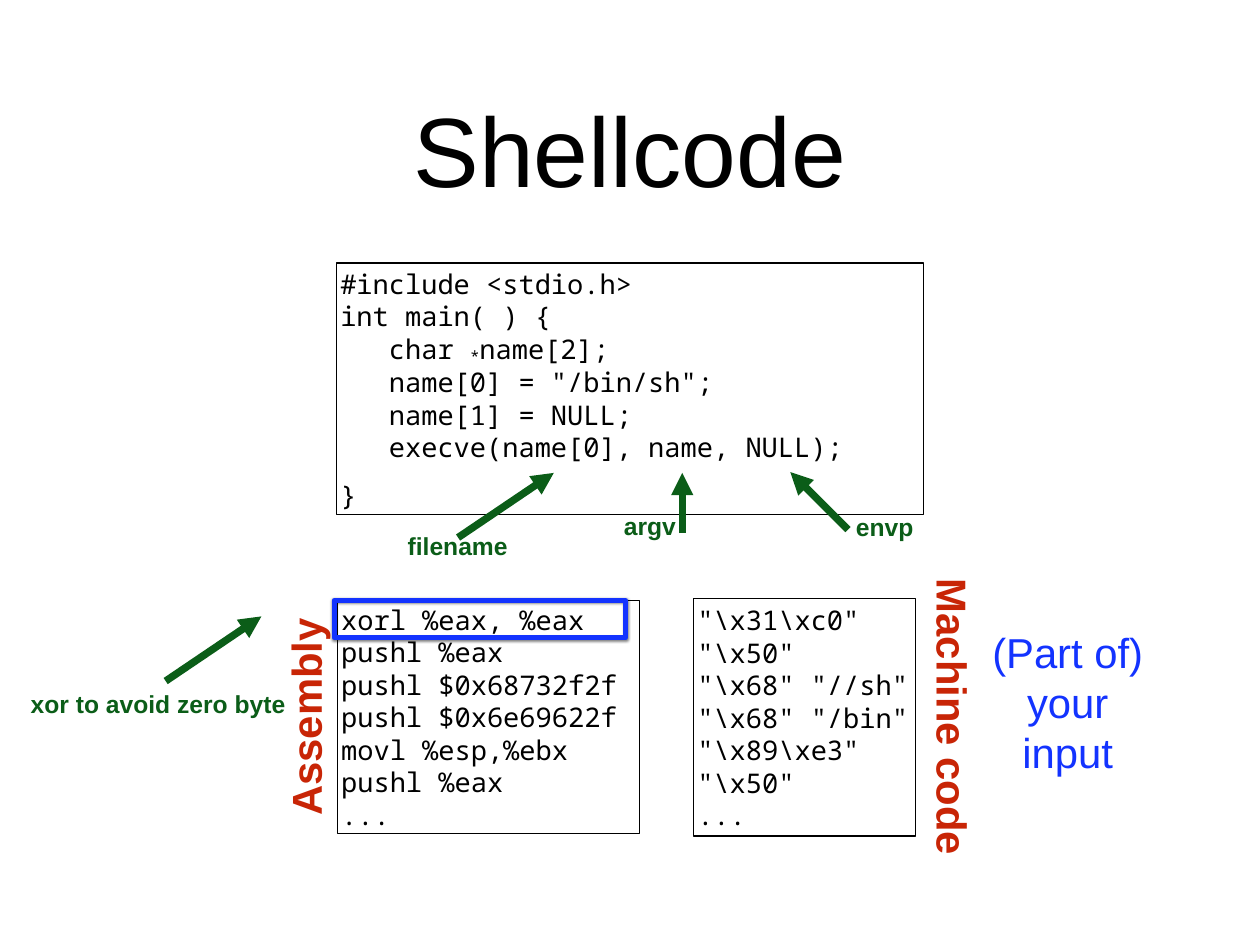
from dataclasses import dataclass

from lxml import etree
from pptx import Presentation
from pptx.dml.color import RGBColor
from pptx.enum.shapes import MSO_CONNECTOR, MSO_SHAPE
from pptx.enum.text import MSO_ANCHOR, PP_ALIGN
from pptx.oxml import parse_xml
from pptx.oxml.ns import qn
from pptx.util import Inches, Pt

RECTANGLE = MSO_SHAPE.RECTANGLE
STRAIGHT = MSO_CONNECTOR.STRAIGHT
MIDDLE = MSO_ANCHOR.MIDDLE
LEFT, CENTER = PP_ALIGN.LEFT, PP_ALIGN.CENTER

BLACK, RED, BLUE, GREEN = "000000", "C82506", "1333FF", "0B5D18"
SANS, MONO = "Arial", "Noto Sans Mono"

C_SOURCE = """#include <stdio.h>
int main( ) {
   char *name[2];
   name[0] = "/bin/sh";
   name[1] = NULL;
   execve(name[0], name, NULL);
}"""

ASSEMBLY = """xorl %eax, %eax
pushl %eax
pushl $0x68732f2f
pushl $0x6e69622f
movl %esp,%ebx
pushl %eax
..."""

MACHINE_CODE = r'''"\x31\xc0"
"\x50"
"\x68" "//sh"
"\x68" "/bin"
"\x89\xe3"
"\x50"
...'''

HIGHLIGHT_SHADOW = (
    '<a:effectLst xmlns:a="http://schemas.openxmlformats.org/drawingml/2006/main">'
    '<a:outerShdw blurRad="25400" dist="12700" dir="5400000" rotWithShape="0">'
    '<a:srgbClr val="000000"><a:alpha val="50000"/></a:srgbClr>'
    "</a:outerShdw></a:effectLst>"
)


@dataclass
class Box:
    left: float
    top: float
    width: float
    height: float

    def lengths(self) -> list:
        return [Inches(v) for v in (self.left, self.top, self.width, self.height)]


@dataclass
class Label:
    text: str
    box: Box
    size: int
    color: str
    bold: bool = False
    rotation: int = 0
    inset: float = 0.04
    wrap: bool = False


@dataclass
class Listing:
    code: str
    box: Box
    wrap: bool = False


@dataclass
class Note:
    """A green remark with an arrow to the code it explains."""
    text: str
    box: Box
    start: tuple[float, float]
    end: tuple[float, float]


LISTINGS = [
    Listing(C_SOURCE, Box(3.8, 2.97, 6.62, 2.84), wrap=True),
    Listing(ASSEMBLY, Box(3.81, 6.78, 3.41, 2.63)),
    Listing(MACHINE_CODE, Box(7.83, 6.76, 2.5, 2.68)),
]
LABELS = [
    Label("Shellcode", Box(1.04, 0.49, 12.14, 2.36), 80, BLACK, inset=0.06, wrap=True),
    Label("Assembly", Box(2.28, 7.77, 2.33, 0.65), 34, RED, bold=True, rotation=270),
    Label("Machine code", Box(9.15, 7.77, 3.22, 0.65), 34, RED, bold=True, rotation=90),
    Label("(Part of)\nyour\ninput", Box(11.09, 7.03, 1.92, 1.79), 34, BLUE),
]
NOTES = [
    Note("filename", Box(4.54, 5.94, 1.25, 0.44), (5.17, 6.07), (6.25, 5.34)),
    Note("argv", Box(6.98, 5.72, 0.71, 0.44), (7.7, 6.02), (7.7, 5.34)),
    Note("envp", Box(9.6, 5.73, 0.77, 0.44), (9.57, 5.98), (8.92, 5.33)),
    Note("xor to avoid zero byte", Box(0.28, 7.72, 3.01, 0.45), (1.87, 7.69), (2.95, 6.96)),
]
FIRST_INSTRUCTION = Box(3.77, 6.78, 3.29, 0.42)


def rgb(color: str) -> RGBColor:
    return RGBColor.from_string(color)


def set_up_frame(frame, inset: float, wrap: bool) -> None:
    frame.word_wrap = wrap
    frame.vertical_anchor = MIDDLE
    frame.margin_left = frame.margin_right = Inches(inset)
    frame.margin_top = frame.margin_bottom = Inches(inset)


def style(paragraph, face: str, size: int, color: str, bold: bool, align) -> None:
    paragraph.alignment = align
    font = paragraph.font
    font.name, font.size, font.bold = face, Pt(size), bold
    font.color.rgb = rgb(color)


def add_outline(slide, box: Box, color: str, width: float):
    outline = slide.shapes.add_shape(RECTANGLE, *box.lengths())
    outline.shadow.inherit = False
    outline.fill.background()
    outline.line.color.rgb = rgb(color)
    outline.line.width = Pt(width)
    return outline


def add_code_line(paragraph, line: str) -> None:
    """Write one line of code, with a pointer asterisk lowered."""
    before, star, after = line.partition("*")
    paragraph.add_run().text = before
    if star:
        pointer = paragraph.add_run()
        pointer.text = star
        pointer._r.get_or_add_rPr().set("baseline", "-14000")
        paragraph.add_run().text = after


def add_listing(slide, listing: Listing) -> None:
    frame = add_outline(slide, listing.box, BLACK, 1).text_frame
    set_up_frame(frame, 0.04, listing.wrap)
    for index, line in enumerate(listing.code.split("\n")):
        paragraph = frame.add_paragraph() if index else frame.paragraphs[0]
        add_code_line(paragraph, line)
        style(paragraph, MONO, 22, BLACK, False, LEFT)
        if line == "}":
            paragraph.space_before = Pt(12)


def add_label(slide, label: Label) -> None:
    text_box = slide.shapes.add_textbox(*label.box.lengths())
    text_box.rotation = label.rotation
    frame = text_box.text_frame
    set_up_frame(frame, label.inset, label.wrap)
    frame.text = label.text
    for paragraph in frame.paragraphs:
        style(paragraph, SANS, label.size, label.color, label.bold, CENTER)


def add_note(slide, note: Note) -> None:
    add_label(slide, Label(note.text, note.box, 20, GREEN, bold=True, inset=0.06))
    points = [Inches(v) for v in (*note.start, *note.end)]
    arrow = slide.shapes.add_connector(STRAIGHT, *points)
    arrow.line.color.rgb = rgb(GREEN)
    arrow.line.width = Pt(6)
    etree.SubElement(arrow.line._get_or_add_ln(), qn("a:tailEnd"), type="triangle")
    etree.SubElement(arrow._element.spPr, qn("a:effectLst"))


def add_highlight(slide, box: Box) -> None:
    properties = add_outline(slide, box, BLUE, 4)._element.spPr
    properties.replace(properties.find(qn("a:effectLst")), parse_xml(HIGHLIGHT_SHADOW))


def main() -> None:
    presentation = Presentation()
    presentation.slide_width = Inches(14.22)
    presentation.slide_height = Inches(10.67)
    slide = presentation.slides.add_slide(presentation.slide_layouts[6])
    for listing in LISTINGS:
        add_listing(slide, listing)
    for label in LABELS:
        add_label(slide, label)
    add_highlight(slide, FIRST_INSTRUCTION)
    for note in NOTES:
        add_note(slide, note)
    presentation.save("out.pptx")


if __name__ == "__main__":
    main()
